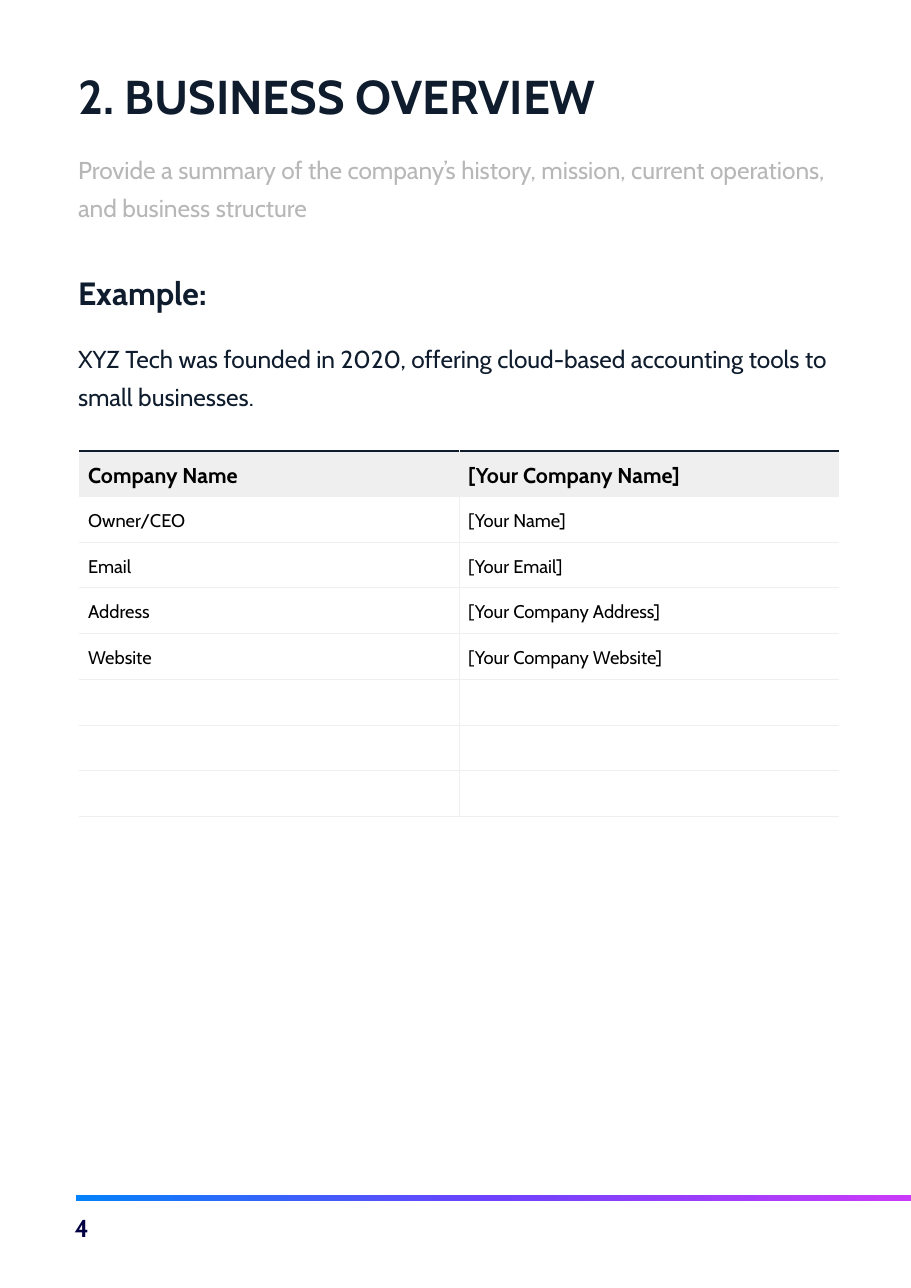
from dataclasses import dataclass

from lxml.etree import SubElement
from copy import deepcopy
from pptx import Presentation
from pptx.dml.color import RGBColor
from pptx.enum.shapes import MSO_SHAPE
from pptx.enum.text import MSO_ANCHOR, PP_ALIGN
from pptx.oxml.ns import qn
from pptx.util import Inches, Pt


@dataclass(frozen=True)
class Theme:
    font: str = "Cabin"
    ink: str = "0E1C2D"
    hint: str = "B7B7B7"
    page: str = "030043"
    cell: str = "000000"
    rule: str = "EFEFEF"
    gradient: tuple = ((0, "0481FC"), (0.5, "6E42FE"), (1, "CA3AFA"))
    title_size: float = 31
    heading_size: float = 21
    body_size: float = 16
    header_size: float = 14
    row_size: float = 12
    rule_width: float = 0.66
    top_width: float = 1.5


THEME = Theme()
TEXT_LEFT, TEXT_WIDTH = 0.61, 7.01

COMPANY_ROWS = [
    ("Company Name", "[Your Company Name]"),
    ("Owner/CEO", "[Your Name]"),
    ("Email", "[Your Email]"),
    ("Address", "[Your Company Address]"),
    ("Website", "[Your Company Website]"),
    ("", ""),
    ("", ""),
    ("", ""),
]


def apply_format(target, values):
    for name, value in values.items():
        setattr(target, name, value)


def write_text(tf, text, size, color, bold=False, spacing=1.0):
    p = tf.paragraphs[0]
    apply_format(p, {"alignment": PP_ALIGN.LEFT, "line_spacing": spacing})
    r = p.add_run()
    r.text = text
    apply_format(r.font, {"name": THEME.font, "size": Pt(size), "bold": bold})
    r.font.color.rgb = RGBColor.from_string(color)


def format_frame(tf):
    margins = {f"margin_{side}": Inches(0.1) for side in ("left", "right", "top", "bottom")}
    apply_format(tf, {"word_wrap": True, "vertical_anchor": MSO_ANCHOR.TOP, **margins})


def set_title(s, text, top, height):
    title = s.shapes.title
    box = {"left": TEXT_LEFT, "top": top, "width": TEXT_WIDTH, "height": height}
    apply_format(title, {name: Inches(value) for name, value in box.items()})
    format_frame(title.text_frame)
    write_text(title.text_frame, text, THEME.title_size, THEME.ink, bold=True)


def add_text(s, text, top, height, size, color, left=TEXT_LEFT, width=TEXT_WIDTH, **style):
    sp = s.shapes.add_textbox(Inches(left), Inches(top), Inches(width), Inches(height))
    format_frame(sp.text_frame)
    write_text(sp.text_frame, text, size, color, **style)


def add_gradient_bar(s, left, top, width, height):
    bar = s.shapes.add_shape(
        MSO_SHAPE.RECTANGLE, Inches(left), Inches(top), Inches(width), Inches(height))
    bar.shadow.inherit = False
    bar.line.fill.background()
    bar.fill.gradient()
    bar.fill.gradient_angle = 0
    # A new gradient has two stops; a third is cloned from the first
    stop_list = bar._element.spPr.find(qn("a:gradFill")).find(qn("a:gsLst"))
    stop_list.insert(1, deepcopy(stop_list[0]))
    for stop, (position, color) in zip(bar.fill.gradient_stops, THEME.gradient):
        stop.position = position
        stop.color.rgb = RGBColor.from_string(color)


def set_border(cell, side, line):
    ln = SubElement(cell._tc.get_or_add_tcPr(), qn(f"a:ln{side}"))
    if line is None:
        SubElement(ln, qn("a:noFill"))
        return
    color, width = line
    ln.set("w", str(Pt(width)))
    SubElement(SubElement(ln, qn("a:solidFill")), qn("a:srgbClr")).set("val", color)


def format_cell(cell, text, is_header, is_first, is_last):
    apply_format(cell, {
        "margin_left": Inches(0.08), "margin_right": Inches(0.1),
        "margin_top": 0, "margin_bottom": 0, "vertical_anchor": MSO_ANCHOR.MIDDLE})
    thin = (THEME.rule, THEME.rule_width)
    borders = {
        "L": None if is_first else thin,
        "R": None if is_last else thin,
        "T": (THEME.ink, THEME.top_width) if is_header else thin,
        "B": thin,
    }
    for side, line in borders.items():
        set_border(cell, side, line)
    if is_header:
        cell.fill.solid()
        cell.fill.fore_color.rgb = RGBColor.from_string(THEME.rule)
    else:
        cell.fill.background()
    if text:
        size = THEME.header_size if is_header else THEME.row_size
        write_text(cell.text_frame, text, size, THEME.cell, is_header, spacing=1.15)


def add_company_table(s, rows, left, top, column_width, row_height):
    columns = len(rows[0])
    table = s.shapes.add_table(
        len(rows), columns, Inches(left), Inches(top),
        Inches(column_width * columns), Inches(row_height * len(rows))).table
    apply_format(table, {"first_row": False, "horz_banding": False})
    for i, row in enumerate(rows):
        for j, text in enumerate(row):
            format_cell(table.cell(i, j), text, i == 0, j == 0, j == columns - 1)


def main():
    prs = Presentation()
    prs.slide_width, prs.slide_height = Inches(8.27), Inches(11.69)
    s = prs.slides.add_slide(prs.slide_layouts.get_by_name("Title Only"))

    # Heading and instructions
    set_title(s, "2. BUSINESS OVERVIEW", 0.51, 0.72)
    add_text(s, "Provide a summary of the company’s history, mission, current operations, "
             "and business structure", 1.23, 0.82, THEME.body_size, THEME.hint, spacing=1.3)

    # Example
    add_text(s, "Example:", 2.38, 0.56, THEME.heading_size, THEME.ink, bold=True)
    add_text(s, "XYZ Tech was founded in 2020, offering cloud-based accounting tools "
             "to small businesses.", 2.94, 0.82, THEME.body_size, THEME.ink, spacing=1.3)

    # Footer
    add_gradient_bar(s, 0.69, 10.85, 7.58, 0.05)
    add_text(s, "4", 10.91, 0.47, THEME.body_size, THEME.page, left=0.58, width=2.8, bold=True)

    # Company details
    add_company_table(s, COMPANY_ROWS, 0.72, 4.09, 3.45, 0.415)

    prs.save("out.pptx")


if __name__ == "__main__":
    main()
